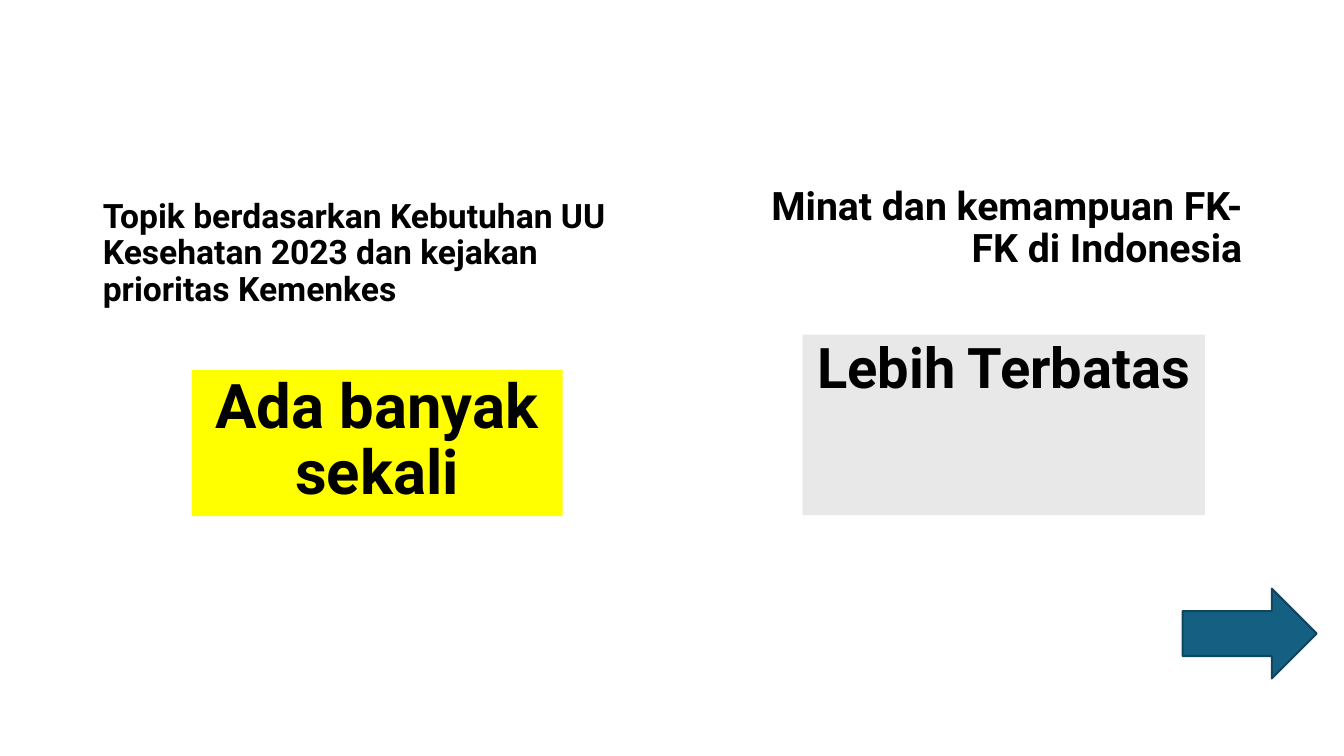
"""Build a slide comparing the topics needed with the interest of the faculties."""
from lxml import etree
from pptx import Presentation
from pptx import util as u
from pptx.dml.color import RGBColor
from pptx.enum import shapes, text
from pptx.oxml.ns import qn

FONT = "Roboto"
ALIGN = text.PP_ALIGN
ANCHOR = text.MSO_ANCHOR


def color(hex_string):
    """Return the colour for a hex string."""
    return RGBColor.from_string(hex_string)


def place(shape, left, top, width, height):
    """Position a shape, with lengths in inches."""
    shape.left, shape.top = u.Inches(left), u.Inches(top)
    shape.width, shape.height = u.Inches(width), u.Inches(height)


def write_text(shape, content, *, size, align, anchor=ANCHOR.TOP):
    """Write one bold paragraph without a bullet."""
    frame = shape.text_frame
    frame.word_wrap = True
    frame.auto_size = text.MSO_AUTO_SIZE.NONE
    frame.vertical_anchor = anchor
    paragraph = frame.paragraphs[0]
    paragraph.alignment = align
    paragraph.line_spacing = 0.9
    paragraph.space_before = u.Pt(10)
    properties = paragraph._p.get_or_add_pPr()
    properties.set("marL", "0")
    properties.set("indent", "0")
    etree.SubElement(properties, qn("a:buNone"))
    run = paragraph.add_run()
    run.text = content
    run.font.name = FONT
    run.font.size = u.Pt(size)
    run.font.bold = True
    run.font.color.rgb = color("000000")


def fill_heading(placeholder, content, box, size, align):
    """Fill a heading that stands on the bottom of its box."""
    place(placeholder, *box)
    write_text(placeholder, content, size=size, align=align, anchor=ANCHOR.BOTTOM)


def fill_answer(placeholder, content, box, size, fill):
    """Fill a coloured answer box with centred text."""
    place(placeholder, *box)
    placeholder.fill.solid()
    placeholder.fill.fore_color.rgb = color(fill)
    write_text(placeholder, content, size=size, align=ALIGN.CENTER)


def add_arrow(slide, left, top, width, height):
    """Add the arrow that points onward."""
    arrow = slide.shapes.add_shape(
        shapes.MSO_SHAPE.RIGHT_ARROW, *map(u.Inches, (left, top, width, height)))
    arrow.shadow.inherit = False
    arrow.fill.solid()
    arrow.fill.fore_color.rgb = color("156082")
    arrow.line.color.rgb = color("104760")
    arrow.line.width = u.Pt(1.5)


def main():
    """Build and save the slide."""
    presentation = Presentation()
    presentation.slide_width = u.Inches(13.33)
    presentation.slide_height = u.Inches(7.5)
    comparison_layout = presentation.slide_layouts.get_by_name("Comparison")
    slide = presentation.slides.add_slide(comparison_layout)
    title, need, need_answer, interest, interest_answer = slide.placeholders
    title.element.getparent().remove(title.element)

    fill_heading(
        need, "Topik berdasarkan Kebutuhan UU Kesehatan 2023 dan kejakan prioritas Kemenkes",
        (0.92, 1.84, 5.64, 1.27), 24, ALIGN.LEFT)
    fill_answer(need_answer, "Ada banyak sekali", (1.9, 3.67, 3.68, 1.45), 44, "FFFF00")
    fill_heading(
        interest, "Minat dan kemampuan FK-FK di Indonesia",
        (7.5, 1.84, 4.92, 0.9), 28, ALIGN.RIGHT)
    fill_answer(interest_answer, "Lebih Terbatas", (7.96, 3.32, 3.99, 1.79), 40, "E8E8E8")
    add_arrow(slide, 11.73, 5.84, 1.33, 0.89)
    presentation.save("out.pptx")


if __name__ == "__main__":
    main()
